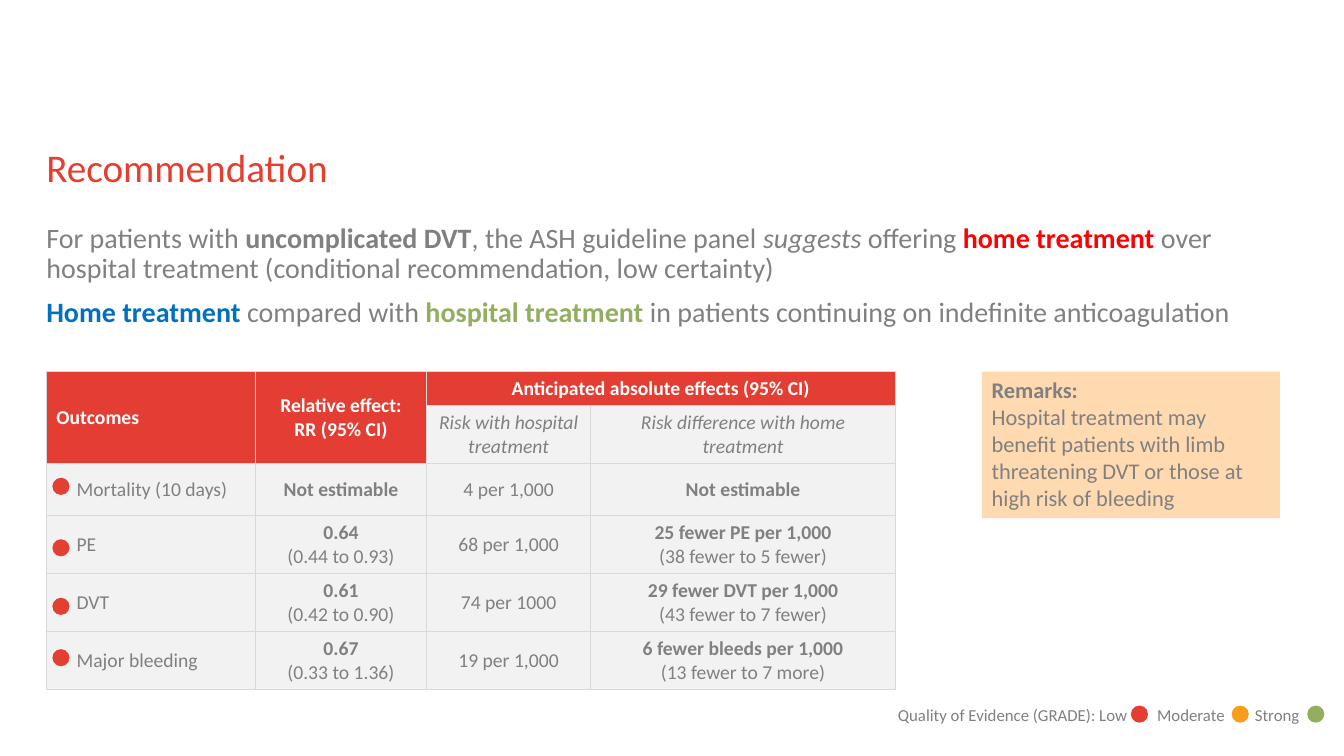
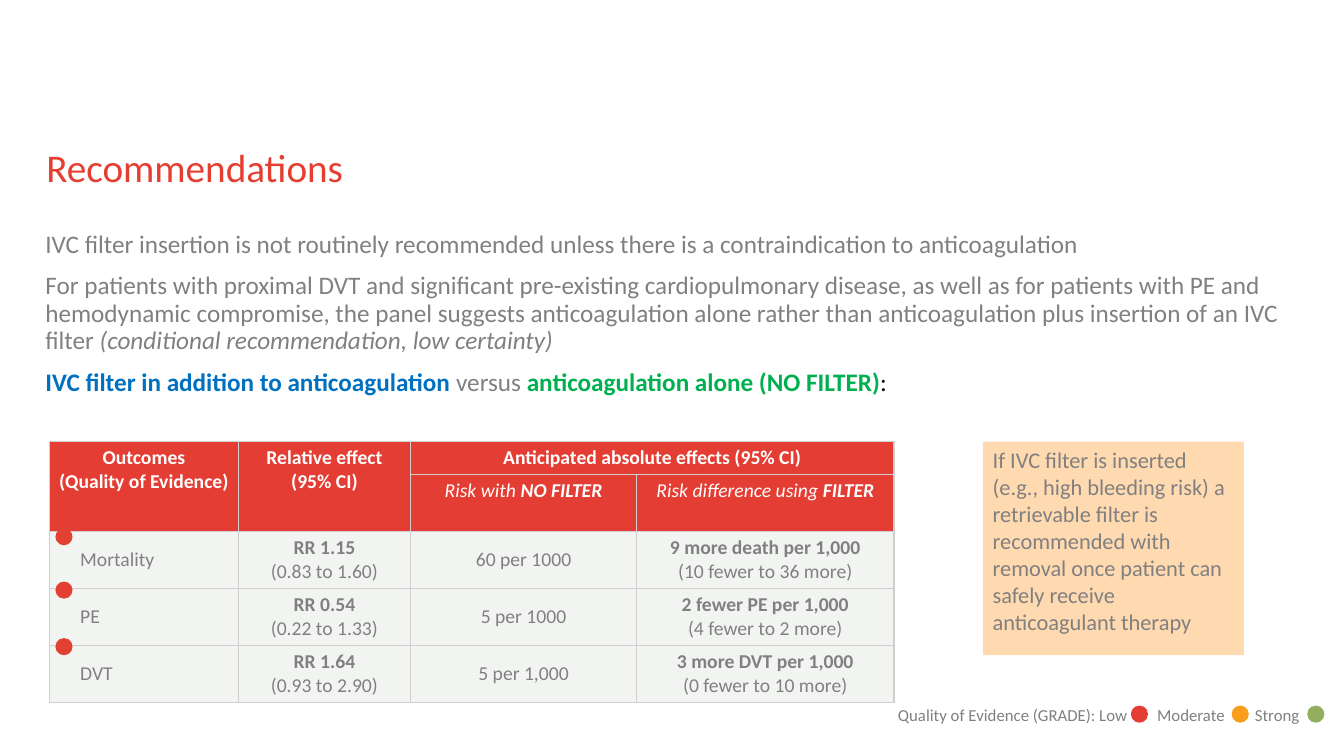
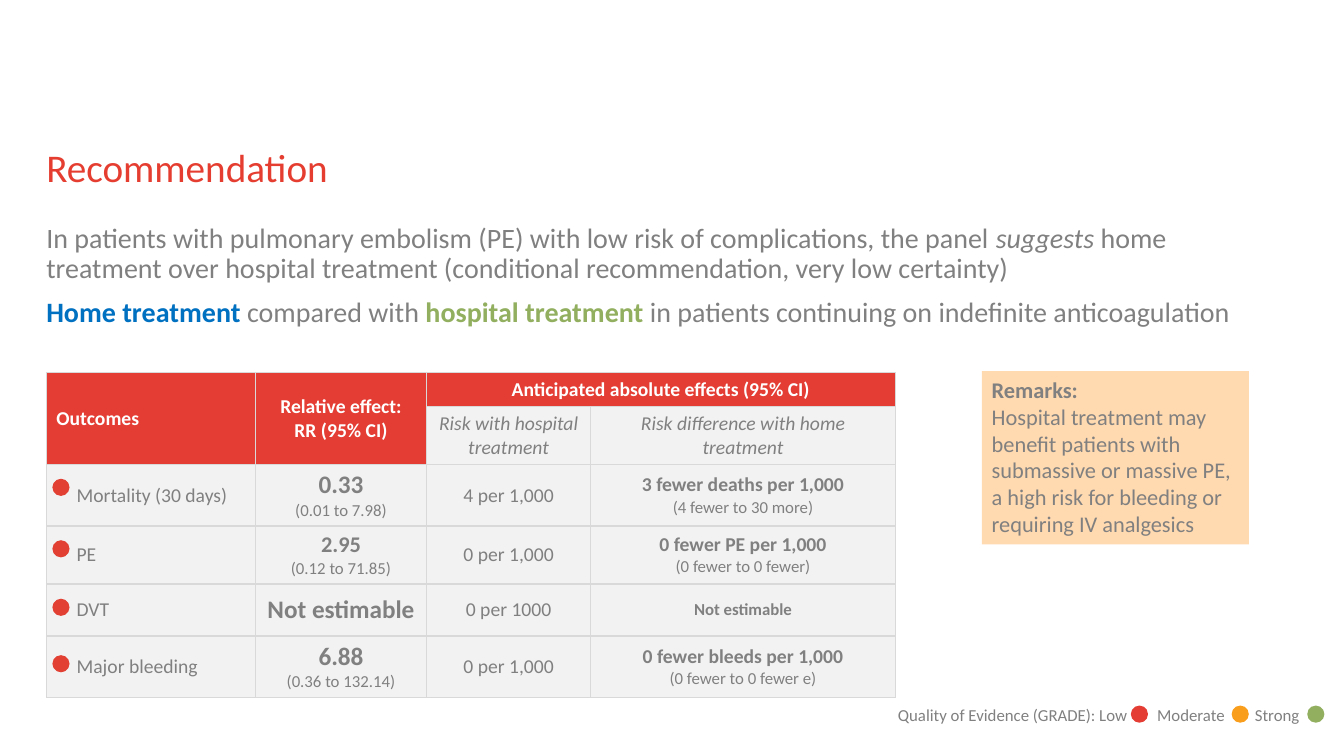
"""Three recommendation slides with outcome tables, remarks and an evidence legend."""
from dataclasses import dataclass

from lxml.etree import SubElement
from pptx import Presentation
from pptx.dml.color import RGBColor
from pptx.enum.shapes import MSO_SHAPE as SHAPE
from pptx.enum.text import MSO_ANCHOR as ANCHOR, PP_ALIGN as ALIGN
from pptx.oxml.ns import qn
from pptx.util import Pt


@dataclass(frozen=True)
class Theme:
    font: str = "Calibri"
    title: str = "E53E31"
    red: str = "E43D33"
    dot: str = "E14033"
    orange: str = "F99D1C"
    olive: str = "91AF5F"
    green: str = "00B050"
    blue: str = "0070C0"
    alert: str = "FF0000"
    gray: str = "808080"
    white: str = "FFFFFF"
    black: str = "000000"
    remark: str = "FFD9B0"
    pale: str = "F2F2F2"
    pale_green: str = "F2F4F2"
    border: str = "D9D9D9"
    dark_border: str = "D0CECE"
    title_size: int = 28
    body_size: int = 20
    dense_size: int = 18
    remark_size: int = 16
    table_size: int = 14
    small_size: int = 12


theme = Theme()
DOT_SIZE = 12.24


def write(frame, paragraphs, size, align=ALIGN.LEFT, line_spacing=1.0, gap=0):
    """Fill a frame with paragraphs made of (text, colour, style, size) runs."""
    frame.word_wrap = True
    for index, runs in enumerate(paragraphs):
        paragraph = frame.paragraphs[0] if index == 0 else frame.add_paragraph()
        paragraph.alignment = align
        paragraph.line_spacing = line_spacing
        paragraph.space_before = Pt(gap if index else 0)
        for text, color, style, *own_size in runs:
            run = paragraph.add_run()
            run.text = text
            run.font.name = theme.font
            run.font.size = Pt(own_size[0] if own_size else size)
            run.font.color.rgb = RGBColor.from_string(color)
            run.font.bold = "b" in style
            run.font.italic = "i" in style


def add_filled(shapes, kind, box, color):
    """Add a plain shape without outline or shadow."""
    shape = shapes.add_shape(kind, *map(Pt, box))
    shape.shadow.inherit = False
    shape.fill.solid()
    shape.fill.fore_color.rgb = RGBColor.from_string(color)
    shape.line.fill.background()
    return shape


home_comparison = [
    ("Home treatment ", theme.blue, "b"),
    ("compared with ", theme.gray, ""),
    ("hospital treatment ", theme.olive, "b"),
    ("in patients continuing on indefinite anticoagulation", theme.gray, ""),
]
home_table = {
    "left": 33.12, "columns": [149.5, 122, 117.5, 217.4], "border": theme.border,
    "fill": theme.pale, "subhead_fill": theme.pale, "head_anchor": ANCHOR.MIDDLE,
    "outcome_align": ALIGN.LEFT, "outcome_inset": 21.6, "inset": 7.2, "dot_left": 37.44,
    "heads": ["Outcomes", "Relative effect:\nRR (95% CI)", "Anticipated absolute effects (95% CI)"],
    "subheads": [
        [("Risk with hospital treatment", theme.gray, "i")],
        [("Risk difference with home treatment", theme.gray, "i")],
    ],
}
filter_table = {
    "left": 35.28, "columns": [135, 123, 161.5, 183.8], "border": theme.dark_border,
    "fill": theme.pale_green, "subhead_fill": theme.red, "head_anchor": ANCHOR.TOP,
    "outcome_align": ALIGN.CENTER, "outcome_inset": 22, "inset": 6.5, "dot_left": 39.6,
    "heads": ["Outcomes\n(Quality of Evidence)", "Relative effect\n(95% CI)", "Anticipated absolute effects (95% CI)"],
    "subheads": [
        [("Risk with ", theme.white, "i"), ("NO FILTER", theme.white, "bi")],
        [("Risk difference using ", theme.white, "i"), ("FILTER", theme.white, "bi")],
    ],
}

slides = [
    {
        "title": "Recommendation",
        "blocks": [((33.12, 160, 864, 90), theme.body_size, [
            [
                ("For patients with ", theme.gray, ""),
                ("uncomplicated DVT", theme.gray, "b"),
                (", the ASH guideline panel ", theme.gray, ""),
                ("suggests", theme.gray, "i"),
                (" offering ", theme.gray, ""),
                ("home treatment ", theme.alert, "b"),
                ("over hospital treatment (conditional recommendation, low certainty)", theme.gray, ""),
            ],
            home_comparison,
        ])],
        "table": home_table, "top": 265.5,
        "heights": [24.3, 41.4, 37.2, 41.4, 41.4, 41.4],
        "rows": [
            ["Mortality (10 days)", "Not estimable", "4 per 1,000", "Not estimable"],
            ["PE", "0.64\n(0.44 to 0.93)", "68 per 1,000", "25 fewer PE per 1,000\n(38 fewer to 5 fewer)"],
            ["DVT", "0.61\n(0.42 to 0.90)", "74 per 1000", "29 fewer DVT per 1,000\n(43 fewer to 7 fewer)"],
            ["Major bleeding", "0.67\n(0.33 to 1.36)", "19 per 1,000", "6 fewer bleeds per 1,000\n(13 fewer to 7 more)"],
        ],
        "sizes": [(14, 14)] * 4, "detail_size": theme.table_size,
        "dots": [341.3, 385.2, 427, 463.7],
        "remark_box": (701.3, 265.5, 213, 104.6),
        "remark": [
            [("Remarks:", theme.gray, "b")],
            [("Hospital treatment may benefit patients with limb threatening DVT or those at high risk of bleeding",
              theme.gray, "")],
        ],
    },
    {
        "title": "Recommendations",
        "blocks": [
            ((32.4, 165.6, 892, 90), theme.dense_size, [
                [("IVC filter insertion is not routinely recommended unless there is a contraindication to "
                  "anticoagulation", theme.gray, "")],
                [
                    ("For patients with proximal DVT and significant pre-existing cardiopulmonary disease, as well as "
                     "for patients with PE and hemodynamic compromise, the panel suggests anticoagulation alone rather "
                     "than anticoagulation plus insertion of an IVC filter ", theme.gray, ""),
                    ("(conditional recommendation, low certainty)", theme.gray, "i"),
                ],
            ]),
            ((32.4, 263.8, 804, 21.6), theme.dense_size, [[
                ("IVC filter in addition to anticoagulation ", theme.blue, "b"),
                ("versus ", theme.gray, ""),
                ("anticoagulation alone (NO FILTER)", theme.green, "b"),
                (":", theme.black, ""),
            ]]),
        ],
        "table": filter_table, "top": 315.4,
        "heights": [23.8, 40.6, 40.6, 40.6, 40.6],
        "rows": [
            ["Mortality", "RR 1.15\n(0.83 to 1.60)", "60 per 1000", "9 more death per 1,000\n(10 fewer to 36 more)"],
            ["PE", "RR 0.54\n(0.22 to 1.33)", "5 per 1000", "2 fewer PE per 1,000\n(4 fewer to 2 more)"],
            ["DVT", "RR 1.64\n(0.93 to 2.90)", "5 per 1,000", "3 more DVT per 1,000\n(0 fewer to 10 more)"],
        ],
        "sizes": [(14, 14)] * 3, "detail_size": theme.table_size,
        "dots": [377.3, 415.4, 455.8],
        "remark_box": (702, 315.4, 186.5, 152.6),
        "remark": [[("If IVC filter is inserted (e.g., high bleeding risk) a retrievable filter is recommended with "
                     "removal once patient can safely receive anticoagulant therapy", theme.gray, "")]],
    },
    {
        "title": "Recommendation",
        "blocks": [((33.12, 160, 864, 90), theme.body_size, [
            [
                ("In patients with pulmonary embolism (PE) with low risk of complications, the panel ", theme.gray, ""),
                ("suggests", theme.gray, "i"),
                (" home treatment over hospital treatment (conditional recommendation, very low certainty)",
                 theme.gray, ""),
            ],
            home_comparison,
        ])],
        "table": home_table, "top": 266.3,
        "heights": [24.3, 41.4, 43.8, 41.4, 37.2, 43.8],
        "rows": [
            ["Mortality (30 days)", "0.33\n(0.01 to 7.98)", "4 per 1,000",
             "3 fewer deaths per 1,000\n(4 fewer to 30 more)"],
            ["PE", "2.95\n(0.12 to 71.85)", "0 per 1,000", "0 fewer PE per 1,000\n(0 fewer to 0 fewer)"],
            ["DVT", "Not estimable", "0 per 1000", "Not estimable"],
            ["Major bleeding", "6.88\n(0.36 to 132.14)", "0 per 1,000",
             "0 fewer bleeds per 1,000\n(0 fewer to 0 fewer e)"],
        ],
        "sizes": [(18, 14), (16, 14), (18, 12), (18, 14)], "detail_size": theme.small_size,
        "dots": [342, 385.9, 427.7, 468],
        "remark_box": (701.3, 265, 190.8, 123.8),
        "remark": [
            [("Remarks:", theme.gray, "b")],
            [("Hospital treatment may benefit patients with submassive or massive PE, a high risk for bleeding or "
              "requiring IV analgesics", theme.gray, "")],
        ],
    },
]

presentation = Presentation()
presentation.slide_width = Pt(960)
presentation.slide_height = Pt(540)

for content in slides:
    slide = presentation.slides.add_slide(presentation.slide_layouts[6])
    design = content["table"]

    title_block = ((33.12, 105.84, 864, 33.12), theme.title_size, [[(content["title"], theme.title, "")]])
    for box, size, paragraphs in [title_block] + content["blocks"]:
        frame = slide.shapes.add_textbox(*map(Pt, box)).text_frame
        frame.margin_left = frame.margin_right = frame.margin_top = frame.margin_bottom = 0
        write(frame, paragraphs, size, line_spacing=0.9, gap=10)

    table_box = (design["left"], content["top"], sum(design["columns"]), sum(content["heights"]))
    table = slide.shapes.add_table(len(content["heights"]), 4, *map(Pt, table_box)).table
    table.first_row = table.horz_banding = False
    for column, width in zip(table.columns, design["columns"]):
        column.width = Pt(width)
    for row, height in zip(table.rows, content["heights"]):
        row.height = Pt(height)

    for row_index in range(len(content["heights"])):
        for column_index in range(4):
            cell = table.cell(row_index, column_index)
            properties = cell._tc.get_or_add_tcPr()
            for side in ("a:lnL", "a:lnR", "a:lnT", "a:lnB"):
                line = SubElement(properties, qn(side), w=str(Pt(1)))
                SubElement(SubElement(line, qn("a:solidFill")), qn("a:srgbClr"), val=design["border"])
            is_head = row_index == 0 or (row_index == 1 and column_index < 2)
            fill = theme.red if is_head else design["subhead_fill"] if row_index == 1 else design["fill"]
            cell.fill.solid()
            cell.fill.fore_color.rgb = RGBColor.from_string(fill)
            cell.vertical_anchor = design["head_anchor"] if row_index < 2 else ANCHOR.MIDDLE
            cell.margin_left = cell.margin_right = Pt(design["inset"])
            cell.margin_top = cell.margin_bottom = Pt(3.2)

    table.cell(0, 0).merge(table.cell(1, 0))
    table.cell(0, 1).merge(table.cell(1, 1))
    table.cell(0, 2).merge(table.cell(0, 3))

    for column_index, head in enumerate(design["heads"]):
        paragraphs = [[(text, theme.white, "b")] for text in head.split("\n")]
        align = ALIGN.CENTER if column_index else design["outcome_align"]
        write(table.cell(0, column_index).text_frame, paragraphs, theme.table_size, align)
    for column_index, runs in enumerate(design["subheads"], 2):
        write(table.cell(1, column_index).text_frame, [runs], theme.table_size, ALIGN.CENTER)

    for row_index, (values, sizes) in enumerate(zip(content["rows"], content["sizes"]), 2):
        value_sizes = (theme.table_size, sizes[0], theme.table_size, sizes[1])
        table.cell(row_index, 0).margin_left = Pt(design["outcome_inset"])
        for column_index, (value, size) in enumerate(zip(values, value_sizes)):
            main, *details = value.split("\n")
            paragraphs = [[(main, theme.gray, "b" if column_index in (1, 3) else "", size)]]
            paragraphs += [[(detail, theme.gray, "", content["detail_size"])] for detail in details]
            align = ALIGN.CENTER if column_index else ALIGN.LEFT
            write(table.cell(row_index, column_index).text_frame, paragraphs, size, align)

    legend = slide.shapes.add_group_shape()
    frame = legend.shapes.add_textbox(Pt(634.3), Pt(499.7), Pt(325.7), Pt(21.8)).text_frame
    tabs = SubElement(frame.paragraphs[0]._p.get_or_add_pPr(), qn("a:tabLst"))
    for position in (185.2, 255):
        SubElement(tabs, qn("a:tab"), pos=str(Pt(position)), algn="l")
    write(frame, [[("Quality of Evidence (GRADE): Low\tModerate\tStrong", theme.gray, "")]], theme.small_size)
    for left, color in ((807.8, theme.red), (879.8, theme.orange), (933.8, theme.olive)):
        add_filled(legend.shapes, SHAPE.OVAL, (left, 504, DOT_SIZE, DOT_SIZE), color)

    for top in content["dots"]:
        add_filled(slide.shapes, SHAPE.OVAL, (design["dot_left"], top, DOT_SIZE, DOT_SIZE), theme.dot)

    remark = add_filled(slide.shapes, SHAPE.RECTANGLE, content["remark_box"], theme.remark)
    remark.text_frame.vertical_anchor = ANCHOR.TOP
    write(remark.text_frame, content["remark"], theme.remark_size)

presentation.save("out.pptx")
